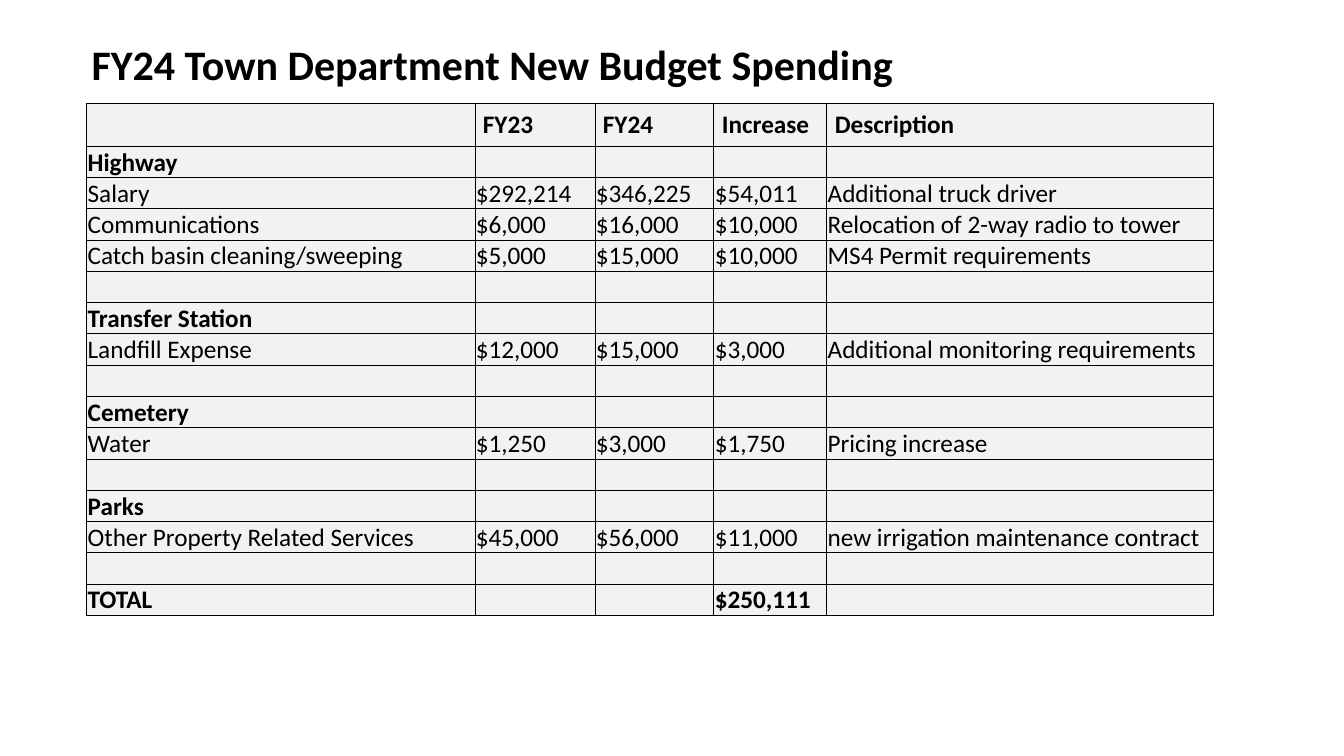
from dataclasses import dataclass

from lxml import etree
from pptx import Presentation
from pptx.dml.color import RGBColor
from pptx.enum.text import MSO_ANCHOR
from pptx.oxml.ns import qn
from pptx.util import Inches, Pt

MIDDLE, BOTTOM = MSO_ANCHOR.MIDDLE, MSO_ANCHOR.BOTTOM


@dataclass(frozen=True)
class Theme:
    """Hold the font, type sizes and colours."""
    font: str = "Calibri"
    title_size: float = 30
    table_size: float = 18
    text: str = "000000"
    fill: str = "F2F2F2"
    border: str = "000000"
    border_width: float = 0.5


THEME = Theme()
TITLE = "FY24 Town Department New Budget Spending"
HEADERS = ("", "FY23", "FY24", "Increase", "Description")
DEPARTMENTS = {
    "Highway": [
        ("Salary", "$292,214", "$346,225", "$54,011", "Additional truck driver"),
        ("Communications", "$6,000", "$16,000", "$10,000", "Relocation of 2-way radio to tower"),
        ("Catch basin cleaning/sweeping", "$5,000", "$15,000", "$10,000", "MS4 Permit requirements"),
    ],
    "Transfer Station": [
        ("Landfill Expense", "$12,000", "$15,000", "$3,000", "Additional monitoring requirements"),
    ],
    "Cemetery": [("Water", "$1,250", "$3,000", "$1,750", "Pricing increase")],
    "Parks": [
        ("Other Property Related Services", "$45,000", "$56,000", "$11,000",
         "new irrigation maintenance contract"),
    ],
}
TOTAL = ("TOTAL", "", "", "$250,111", "")
COL_WIDTHS = (3.85, 1.19, 1.18, 1.12, 3.83)
HEADER_HEIGHT, ROW_HEIGHT = 0.43, 0.31
HEADER_INSETS = (0.08, 0.06, 0.01, 0.06)
BODY_INSETS = (0.01, 0.01, 0.01, 0)


def add_run(p, text, size, bold):
    """Append one styled run to a paragraph."""
    r = p.add_run()
    r.text = text
    r.font.name = THEME.font
    r.font.size = Pt(size)
    r.font.bold = bold
    r.font.color.rgb = RGBColor.from_string(THEME.text)


def add_title(slide, left, top, width, height):
    """Place the slide title in the given box."""
    tf = slide.shapes.add_textbox(*map(Inches, (left, top, width, height))).text_frame
    tf.word_wrap = True
    tf.vertical_anchor = MIDDLE
    p = tf.paragraphs[0]
    p.line_spacing = 0.9
    p.space_after = Pt(6)
    add_run(p, TITLE, THEME.title_size, True)


def add_borders(cell):
    """Draw a thin line on all four sides of a cell."""
    props = cell._tc.get_or_add_tcPr()
    for i, side in enumerate(("a:lnL", "a:lnR", "a:lnT", "a:lnB")):
        ln = etree.Element(qn(side), w=str(Pt(THEME.border_width)))
        solid = etree.SubElement(ln, qn("a:solidFill"))
        etree.SubElement(solid, qn("a:srgbClr"), val=THEME.border)
        props.insert(i, ln)


def style_cell(cell, text, bold, insets):
    """Fill, frame and write one table cell."""
    cell.fill.solid()
    cell.fill.fore_color.rgb = RGBColor.from_string(THEME.fill)
    add_borders(cell)
    cell.vertical_anchor = BOTTOM
    cell.margin_left, cell.margin_top, cell.margin_right, cell.margin_bottom = map(Inches, insets)
    if text:
        add_run(cell.text_frame.paragraphs[0], text, THEME.table_size, bold)


def budget_rows():
    """List every table row with its bold flag."""
    blank = ("",) * len(HEADERS)
    rows = [(HEADERS, True)]
    for name, items in DEPARTMENTS.items():
        rows.append(((name, *blank[1:]), True))
        rows += [(item, False) for item in items]
        rows.append((blank, False))
    return rows + [(TOTAL, True)]


def add_budget_table(slide, left, top):
    """Place the budget table with its corner at the given point."""
    rows = budget_rows()
    height = HEADER_HEIGHT + ROW_HEIGHT * (len(rows) - 1)
    box = map(Inches, (left, top, sum(COL_WIDTHS), height))
    table = slide.shapes.add_table(len(rows), len(COL_WIDTHS), *box).table
    table.first_row = table.horz_banding = False
    for col, width in zip(table.columns, COL_WIDTHS):
        col.width = Inches(width)
    for i, (texts, bold) in enumerate(rows):
        table.rows[i].height = Inches(ROW_HEIGHT if i else HEADER_HEIGHT)
        for j, text in enumerate(texts):
            style_cell(table.cell(i, j), text, bold, BODY_INSETS if i else HEADER_INSETS)


def main():
    """Build and save the slide."""
    prs = Presentation()
    prs.slide_width, prs.slide_height = Inches(13.33), Inches(7.5)
    slide = prs.slides.add_slide(prs.slide_layouts[6])
    add_title(slide, 0.81, 0.29, 10.78, 0.74)
    add_budget_table(slide, 0.86, 1.02)
    prs.save("out.pptx")


if __name__ == "__main__":
    main()
